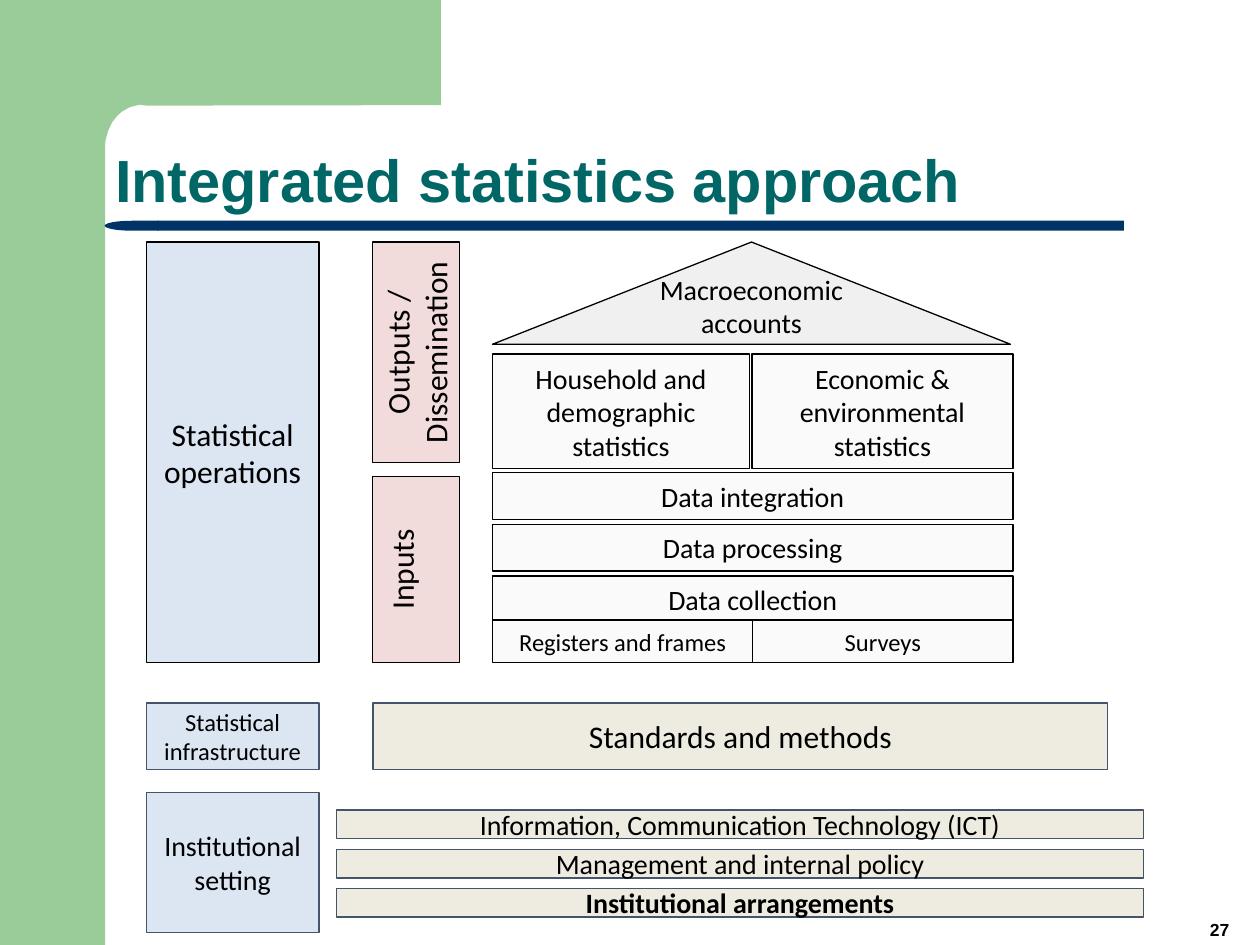
"""Build the slide on the integrated statistics approach."""
from dataclasses import dataclass
from typing import Any, Optional

from lxml.etree import SubElement
from pptx import Presentation
from pptx.dml.color import RGBColor
from pptx.enum.shapes import MSO_SHAPE
from pptx.enum.text import MSO_ANCHOR, MSO_AUTO_SIZE, PP_ALIGN
from pptx.oxml.ns import qn
from pptx.util import Cm, Pt

GREEN = RGBColor(0x99, 0xCC, 0x99)
NAVY = RGBColor(0x00, 0x33, 0x66)
TEAL = RGBColor(0x00, 0x66, 0x66)
BLACK = RGBColor(0x00, 0x00, 0x00)
SLATE = RGBColor(0x44, 0x54, 0x6A)
BLUE = RGBColor(0xDC, 0xE6, 0xF2)
PINK = RGBColor(0xF2, 0xDC, 0xDB)
SAND = RGBColor(0xEE, 0xEC, 0xE1)
PALE = RGBColor(0xFA, 0xFA, 0xFA)
ROOF = RGBColor(0xF0, 0xF0, 0xF0)

LABEL_LEFT, LABEL_WIDTH = 2.95, 3.48
STAGE_LEFT, STAGE_WIDTH = 7.51, 1.75
HOUSE_LEFT, HOUSE_WIDTH = 9.93, 10.49
HALF_WIDTH = HOUSE_WIDTH / 2
TOP = 4.88
LAYER_TOP, LAYER_PITCH, LAYER_HEIGHT = 9.53, 1.04, 0.94
SETTING_TOP, SETTING_PITCH = 16.33, 0.79

TEXT_FORMAT = {
    "word_wrap": True,
    "auto_size": MSO_AUTO_SIZE.NONE,
    "margin_left": Cm(0.2),
    "margin_right": Cm(0.2),
    "margin_top": Cm(0.1),
    "margin_bottom": Cm(0.1),
}
CORNER = [
    (8.89, 2.12), (2.95, 2.13), (2.82, 2.11), (2.62, 2.16), (2.46, 2.25),
    (2.36, 2.34), (2.26, 2.47), (2.18, 2.64), (2.13, 2.82), (2.11, 2.95),
    (2.11, 3.25), (1.27, 3.25), (1.27, 0),
]


@dataclass
class Box:
    text: str
    left: float
    top: float
    width: float
    height: float
    fill: RGBColor
    size: int = 16
    line: RGBColor = BLACK
    bold: bool = False
    vertical: bool = False
    anchor: Any = MSO_ANCHOR.MIDDLE
    kind: Any = MSO_SHAPE.RECTANGLE


def set_values(target: Any, values: dict) -> None:
    """Set each named attribute on the target."""
    for name, value in values.items():
        setattr(target, name, value)


def write_text(shape: Any, text: str, anchor: Any, alignment: Any, font: dict,
               color: RGBColor) -> None:
    """Fill a shape with evenly formatted text."""
    frame = shape.text_frame
    frame.text = text
    set_values(frame, {**TEXT_FORMAT, "vertical_anchor": anchor})
    for paragraph in frame.paragraphs:
        paragraph.alignment = alignment
        for run in paragraph.runs:
            set_values(run.font, font)
            run.font.color.rgb = color


def paint(shape: Any, fill: RGBColor, line: Optional[RGBColor] = None) -> None:
    """Give a shape a flat fill and an optional thin outline."""
    shape.shadow.inherit = False
    shape.fill.solid()
    shape.fill.fore_color.rgb = fill
    if line is None:
        shape.line.fill.background()
    else:
        shape.line.color.rgb = line
        shape.line.width = Pt(0.75)


def draw_plain(slide: Any, kind: Any, left: float, top: float, width: float,
               height: float, fill: RGBColor) -> Any:
    """Draw a shape without outline or text."""
    shape = slide.shapes.add_shape(kind, Cm(left), Cm(top), Cm(width), Cm(height))
    paint(shape, fill)
    return shape


def draw_box(slide: Any, box: Box) -> None:
    """Draw one labelled box of the diagram."""
    shape = draw_plain(slide, box.kind, box.left, box.top, box.width, box.height, box.fill)
    paint(shape, box.fill, box.line)
    font = {"name": "Calibri", "size": Pt(box.size), "bold": box.bold}
    write_text(shape, box.text, box.anchor, PP_ALIGN.CENTER, font, BLACK)
    if box.vertical:
        shape.text_frame._txBody.find(qn("a:bodyPr")).set("vert", "vert270")


def draw_frame(slide: Any) -> None:
    """Draw the green corner and the navy rule."""
    draw_plain(slide, MSO_SHAPE.RECTANGLE, 0, 0, 2.12, 19.05, GREEN)
    builder = slide.shapes.build_freeform(Cm(8.89), 0)
    builder.add_line_segments([(Cm(x), Cm(y)) for x, y in CORNER])
    paint(builder.convert_to_shape(), GREEN)
    draw_plain(slide, MSO_SHAPE.RECTANGLE, 3.18, 4.45, 19.48, 0.2, NAVY)
    cap = draw_plain(slide, MSO_SHAPE.FLOWCHART_DELAY, 2.11, 4.45, 1.09, 0.2, NAVY)
    cap.rotation = 180


def draw_heading(slide: Any) -> None:
    """Place the title and the page number."""
    title = slide.shapes.title
    set_values(title, {"left": Cm(2.12), "top": Cm(1.27),
                       "width": Cm(22.02), "height": Cm(3.18)})
    font = {"name": "Arial", "size": Pt(34), "bold": True}
    write_text(title, "Integrated statistics approach", MSO_ANCHOR.BOTTOM,
               PP_ALIGN.LEFT, font, TEAL)
    title.text_frame.paragraphs[0].line_spacing = 0.9
    number = slide.shapes.add_textbox(Cm(23.77), Cm(18.21), Cm(1.63), Cm(0.84))
    write_text(number, "27", MSO_ANCHOR.BOTTOM, PP_ALIGN.CENTER,
               {**font, "size": Pt(10)}, BLACK)


def diagram_boxes() -> list[Box]:
    """List the diagram boxes from back to front."""
    settings = ["Information, Communication Technology (ICT)",
                "Management and internal policy", "Institutional arrangements"]
    layers = ["Data integration", "Data processing", "Data collection"]
    sources = ["Registers and frames", "Surveys"]
    boxes = [
        Box(text, 6.78, SETTING_TOP + row * SETTING_PITCH, 16.28, 0.58, SAND,
            line=SLATE, bold=row == 2)
        for row, text in enumerate(settings)
    ]
    boxes += [
        Box(text, HOUSE_LEFT, LAYER_TOP + row * LAYER_PITCH, HOUSE_WIDTH, LAYER_HEIGHT, PALE)
        for row, text in enumerate(layers)
    ]
    boxes += [
        Box(text, HOUSE_LEFT + column * HALF_WIDTH, 12.5, HALF_WIDTH, 0.86, PALE, 14)
        for column, text in enumerate(sources)
    ]
    return boxes + [
        Box("Institutional setting", LABEL_LEFT, 15.98, LABEL_WIDTH, 2.82, BLUE, line=SLATE),
        Box("Standards and methods", 7.52, 14.17, 14.81, 1.35, SAND, 18, SLATE),
        Box("Statistical infrastructure", LABEL_LEFT, 14.17, LABEL_WIDTH, 1.35, BLUE, 14, SLATE),
        Box("Inputs", STAGE_LEFT, 9.6, STAGE_WIDTH, 3.76, PINK, 18, vertical=True,
            anchor=MSO_ANCHOR.TOP),
        Box("Macroeconomic\naccounts", HOUSE_LEFT, TOP, 10.44, 2.06, ROOF,
            anchor=MSO_ANCHOR.BOTTOM, kind=MSO_SHAPE.ISOSCELES_TRIANGLE),
        Box("Household and demographic statistics", HOUSE_LEFT, 7.14, 5.18, 2.31, PALE),
        Box("Economic & environmental\nstatistics", 15.16, 7.14, 5.26, 2.31, PALE),
        Box("Outputs / Dissemination", STAGE_LEFT, TOP, STAGE_WIDTH, 4.45, PINK, 18,
            vertical=True),
        Box("Statistical operations", LABEL_LEFT, TOP, LABEL_WIDTH, 8.48, BLUE, 18),
    ]


def main() -> None:
    """Create and save the presentation."""
    presentation = Presentation()
    set_values(presentation, {"slide_width": Cm(25.4), "slide_height": Cm(19.05)})
    slide = presentation.slides.add_slide(presentation.slide_layouts[5])
    draw_frame(slide)
    draw_heading(slide)
    for box in diagram_boxes():
        draw_box(slide, box)
    presentation.save("out.pptx")


if __name__ == "__main__":
    main()
